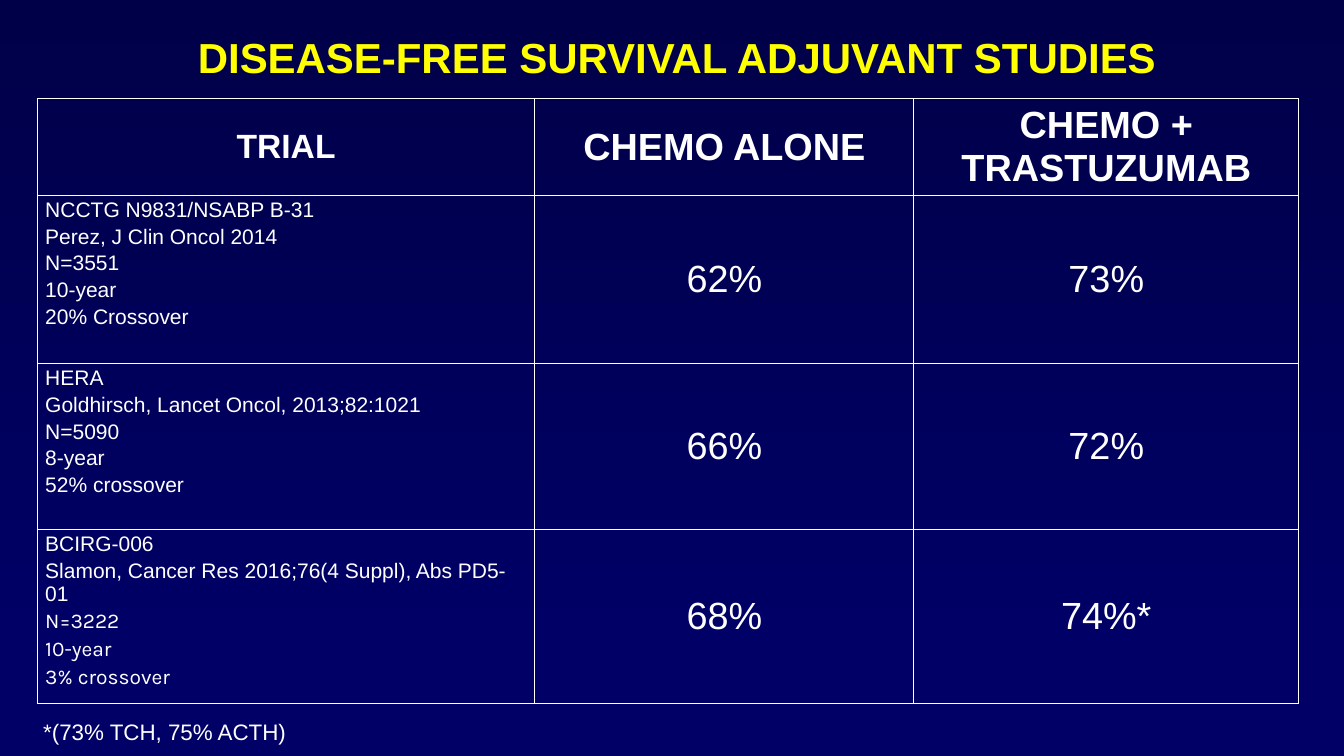
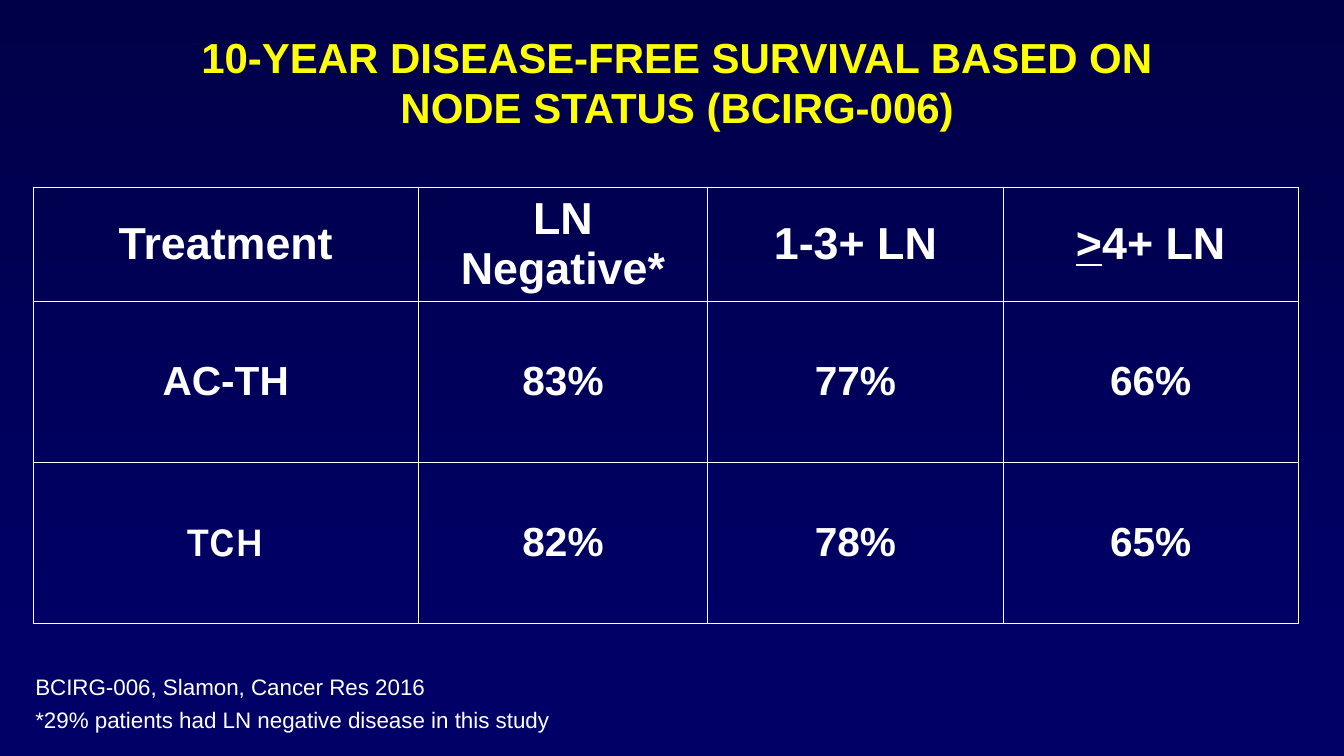
from dataclasses import dataclass
from typing import NamedTuple

from lxml import etree
from pptx import Presentation
from pptx import util as u
from pptx.dml.color import RGBColor
from pptx.enum import text
from pptx.oxml import ns

DEEP_NAVY = RGBColor(0x00, 0x00, 0x49)
NAVY = RGBColor(0x00, 0x00, 0x66)
WHITE = RGBColor(0xFF, 0xFF, 0xFF)
YELLOW = RGBColor(0xFF, 0xFF, 0x00)
MAIN_FONT = "Arial"
SECOND_FONT = "Karla"
CENTER = text.PP_ALIGN.CENTER
LEFT = text.PP_ALIGN.LEFT


class Span(NamedTuple):
    words: str
    font: str = MAIN_FONT
    underline: bool = False


class Box(NamedTuple):
    left: float
    top: float
    width: float
    height: float


Line = list[Span]


@dataclass
class Cell:
    lines: list[Line]
    size: float
    bold: bool = False
    align: text.PP_ALIGN = CENTER
    anchor: text.MSO_ANCHOR = text.MSO_ANCHOR.MIDDLE


@dataclass
class Grid:
    left: float
    top: float
    columns: list[float]
    rows: list[float]
    cells: list[list[Cell]]


@dataclass
class Page:
    title: str
    grid: Grid
    note: list[str]
    note_box: Box


TITLE_BOX = Box(3.66, 0.66, 26.82, 1.22)


def plain(*words: str, font: str = MAIN_FONT) -> list[Line]:
    return [[Span(item, font)] for item in words]


def write(frame, lines: list[Line], *, size: float, color: RGBColor = WHITE,
          bold: bool = False, align: text.PP_ALIGN = LEFT, gap: float = 0) -> None:
    frame.word_wrap = True
    for index, line in enumerate(lines):
        paragraph = frame.add_paragraph() if index else frame.paragraphs[0]
        paragraph.alignment = align
        paragraph.space_before = u.Pt(gap if index else 0)
        for span in line:
            run = paragraph.add_run()
            run.text = span.words
            run.font.name = span.font
            run.font.size = u.Pt(size)
            run.font.bold = bold
            run.font.underline = span.underline
            run.font.color.rgb = color


def draw_text(slide, box: Box, lines: list[Line], **style) -> None:
    shape = slide.shapes.add_textbox(*(u.Cm(length) for length in box))
    write(shape.text_frame, lines, **style)


def set_borders(cell) -> None:
    properties = cell._tc.get_or_add_tcPr()
    for index, side in enumerate(("lnL", "lnR", "lnT", "lnB")):
        border = etree.Element(ns.qn(f"a:{side}"), w=str(u.Pt(1)))
        fill = etree.SubElement(border, ns.qn("a:solidFill"))
        etree.SubElement(fill, ns.qn("a:srgbClr"), val=str(WHITE))
        properties.insert(index, border)


def draw_grid(slide, grid: Grid) -> None:
    box = Box(grid.left, grid.top, sum(grid.columns), sum(grid.rows))
    table = slide.shapes.add_table(
        len(grid.rows), len(grid.columns), *(u.Cm(length) for length in box)
    ).table
    table.first_row = table.horz_banding = False
    for column, width in zip(table.columns, grid.columns):
        column.width = u.Cm(width)
    for row, height, contents in zip(table.rows, grid.rows, grid.cells):
        row.height = u.Cm(height)
        for cell, content in zip(row.cells, contents):
            cell.fill.background()
            set_borders(cell)
            cell.margin_left = cell.margin_right = u.Cm(0.2)
            cell.margin_top = cell.margin_bottom = u.Cm(0.08)
            cell.vertical_anchor = content.anchor
            write(cell.text_frame, content.lines, size=content.size,
                  bold=content.bold, align=content.align, gap=2.4)


def set_background(master) -> None:
    fill = master.background.fill
    fill.gradient()
    fill.gradient_angle = 270
    for stop, color, position in zip(fill.gradient_stops, (DEEP_NAVY, NAVY), (0, 0.86)):
        stop.color.rgb = color
        stop.position = position


def draw_page(presentation, page: Page) -> None:
    slide = presentation.slides.add_slide(presentation.slide_layouts[6])
    draw_grid(slide, page.grid)
    draw_text(slide, TITLE_BOX, plain(page.title), size=30, color=YELLOW,
              bold=True, align=CENTER)
    draw_text(slide, page.note_box, plain(*page.note), size=16, gap=4)


def trial_row(trial: list[Line], chemo: str, trastuzumab: str) -> list[Cell]:
    description = Cell(trial, 15, align=LEFT, anchor=text.MSO_ANCHOR.TOP)
    return [description, *(Cell(plain(value), 27) for value in (chemo, trastuzumab))]


def treatment_row(name: Span, *values: str) -> list[Cell]:
    return [Cell(line, 29, bold=True) for line in ([[name]], *map(plain, values))]


TRIALS = Grid(
    left=0.94, top=2.49, columns=[12.54, 9.55, 9.7], rows=[2.43, 4.24, 4.18, 4.38],
    cells=[
        [Cell(plain("TRIAL"), 24, bold=True),
         Cell(plain("CHEMO ALONE"), 27, bold=True),
         Cell(plain("CHEMO + TRASTUZUMAB"), 27, bold=True)],
        trial_row(plain("NCCTG N9831/NSABP B-31", "Perez, J Clin Oncol 2014",
                        "N=3551", "10-year", "20% Crossover"), "62%", "73%"),
        trial_row(plain("HERA", "Goldhirsch, Lancet Oncol, 2013;82:1021",
                        "N=5090", "8-year", "52% crossover"), "66%", "72%"),
        trial_row(plain("BCIRG-006", "Slamon, Cancer Res 2016;76(4 Suppl), Abs PD5-01")
                  + plain("N=3222", "10-year", "3% crossover", font=SECOND_FONT),
                  "68%", "74%*"),
    ],
)

NODES = Grid(
    left=0.84, top=4.72, columns=[9.7, 7.3, 7.44, 7.44], rows=[2.84, 4.06, 4.06],
    cells=[
        [Cell([line], 32, bold=True) for line in (
            [Span("Treatment")], [Span("LN Negative*")], [Span("1-3+ LN")],
            [Span(">", underline=True), Span("4+ LN")])],
        treatment_row(Span("AC-TH"), "83%", "77%", "66%"),
        treatment_row(Span("TCH", SECOND_FONT), "82%", "78%", "65%"),
    ],
)

PAGES = [
    Page("DISEASE-FREE SURVIVAL ADJUVANT STUDIES", TRIALS,
         ["*(73% TCH, 75% ACTH)"], Box(0.84, 17.98, 9.32, 0.94)),
    Page("10-YEAR DISEASE-FREE SURVIVAL BASED ON NODE STATUS (BCIRG-006)", NODES,
         ["BCIRG-006, Slamon, Cancer Res 2016",
          "*29% patients had LN negative disease in this study"],
         Box(0.64, 16.84, 22.58, 1.75)),
]


def main() -> None:
    presentation = Presentation()
    presentation.slide_width = u.Cm(33.87)
    presentation.slide_height = u.Cm(19.05)
    set_background(presentation.slide_master)
    for page in PAGES:
        draw_page(presentation, page)
    presentation.save("out.pptx")


if __name__ == "__main__":
    main()
